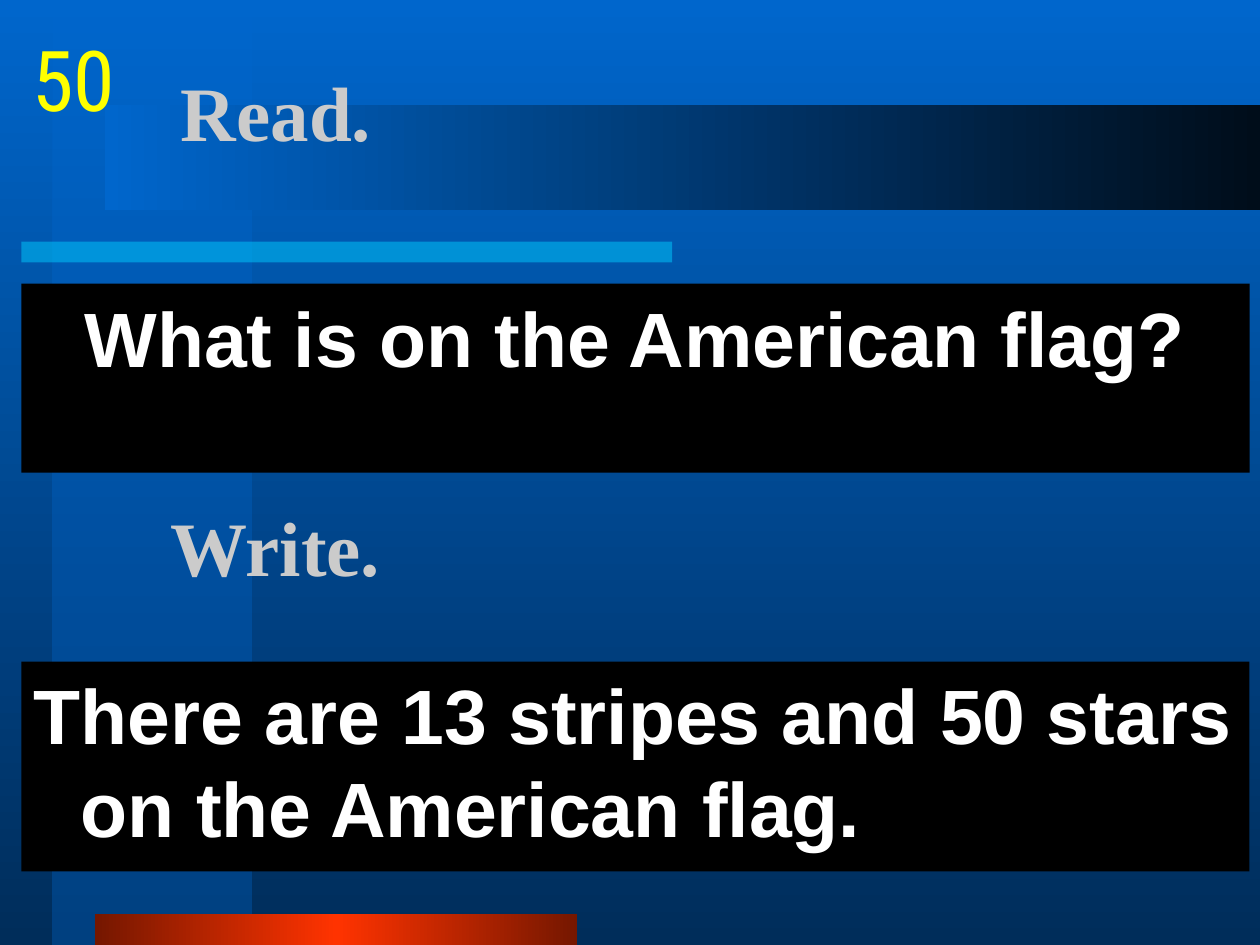
import pptx
import pptx.dml.color
import pptx.enum.shapes
import pptx.enum.text
import pptx.oxml
import pptx.oxml.ns
import pptx.util

Cm = pptx.util.Cm
ALIGN = pptx.enum.text.PP_ALIGN
ANCHOR = pptx.enum.text.MSO_ANCHOR
QUESTION_BOX = (0.43, 5.72, 24.76, 3.81)
ANSWER_BOX = (0.43, 13.34, 24.76, 4.23)


def colour(value):
    """Return the RGB colour of a hex string."""
    return pptx.dml.color.RGBColor.from_string(value)


def place(shape, box):
    """Move and size a shape to left, top, width and height in centimetres."""
    shape.left, shape.top, shape.width, shape.height = map(Cm, box)


def paint_gradient(fill, owner, colours, angle=0, opacity=100):
    """Fill with evenly spaced colours along a clockwise angle."""
    fill.gradient()
    fill.gradient_angle = (360 - angle) % 360
    stops = owner.xpath(".//a:gsLst")[0]
    for stop in list(stops):
        stops.remove(stop)
    for index, value in enumerate(colours):
        position = round(100000 * index / (len(colours) - 1))
        stops.append(pptx.oxml.parse_xml(
            f'<a:gs {pptx.oxml.ns.nsdecls("a")} pos="{position}">'
            f'<a:srgbClr val="{value}"><a:alpha val="{opacity * 1000}"/>'
            '</a:srgbClr></a:gs>'))


def add_band(slide, box, colours, angle=0, opacity=100):
    """Add a decorative rectangle with a gradient fill."""
    band = slide.shapes.add_shape(
        pptx.enum.shapes.MSO_SHAPE.RECTANGLE, *map(Cm, box))
    band.shadow.inherit = False
    band.line.fill.background()
    paint_gradient(band.fill, band._element, colours, angle, opacity)


def write(shape, text, font="Arial", size=44, ink="FFFFFF", bold=True,
          align=ALIGN.LEFT, anchor=ANCHOR.TOP, wrap=True, hanging=0, before=0):
    """Put one formatted paragraph into a shape."""
    frame = shape.text_frame
    frame.word_wrap = wrap
    frame.auto_size = pptx.enum.text.MSO_AUTO_SIZE.NONE
    frame.vertical_anchor = anchor
    paragraph = frame.paragraphs[0]
    paragraph.alignment = align
    paragraph.space_before = pptx.util.Pt(before)
    properties = paragraph._p.get_or_add_pPr()
    properties.set("marL", str(Cm(hanging)))
    properties.set("indent", str(-Cm(hanging)))
    properties.append(pptx.oxml.parse_xml(
        f'<a:buNone {pptx.oxml.ns.nsdecls("a")}/>'))
    run = paragraph.add_run()
    run.text = text
    run.font.name = font
    run.font.size = pptx.util.Pt(size)
    run.font.bold = bold
    run.font.color.rgb = colour(ink)


def write_heading(shape, box, text):
    """Place a grey serif heading."""
    place(shape, box)
    write(shape, text, font="Times New Roman", ink="CBCBCB",
          anchor=ANCHOR.MIDDLE)


def write_panel(shape, box, text, align=ALIGN.LEFT):
    """Place a black panel with a white sentence."""
    place(shape, box)
    shape.fill.solid()
    shape.fill.fore_color.rgb = colour("000000")
    write(shape, text, align=align, hanging=0.95, before=8.8)


def add_text_box(slide):
    """Add an empty text box to be placed later."""
    return slide.shapes.add_textbox(0, 0, Cm(1), Cm(1))


def main():
    """Build the flag question slide."""
    deck = pptx.Presentation()
    deck.slide_width, deck.slide_height = Cm(25.4), Cm(19.05)
    slide = deck.slides.add_slide(deck.slide_layouts[1])
    title, question = slide.placeholders

    paint_gradient(slide.background.fill, slide.element,
                   ["0066CC", "002D5A"], angle=90)
    add_band(slide, (1.06, 0, 4.02, 19.05), ["0066CC", "0053A6"], 90, 50)
    add_band(slide, (0.43, 4.87, 13.12, 0.42), ["00CCFF", "00CCFF"], 0, 50)
    add_band(slide, (1.92, 18.42, 9.72, 0.63), ["751700", "FF3300", "751700"])
    add_band(slide, (2.12, 2.12, 23.28, 2.12), ["0066CC", "000D1A"])
    for placeholder in (title, question):
        slide.shapes._spTree.append(placeholder._element)

    write_heading(title, (3.39, 0.64, 21.59, 3.18), "Read.")
    write_panel(question, QUESTION_BOX, "What is on the American flag?",
                ALIGN.CENTER)
    write_heading(add_text_box(slide), (3.18, 8.89, 21.59, 4.23), "Write.")
    write_panel(add_text_box(slide), ANSWER_BOX,
                "There are 13 stripes and 50 stars on the American flag.")
    points = add_text_box(slide)
    place(points, (0.43, 0.43, 2.12, 2.12))
    write(points, "50", font="Roboto Condensed", size=48, ink="FFFF00",
          bold=False, align=ALIGN.CENTER, wrap=False)

    deck.save("out.pptx")


if __name__ == "__main__":
    main()
